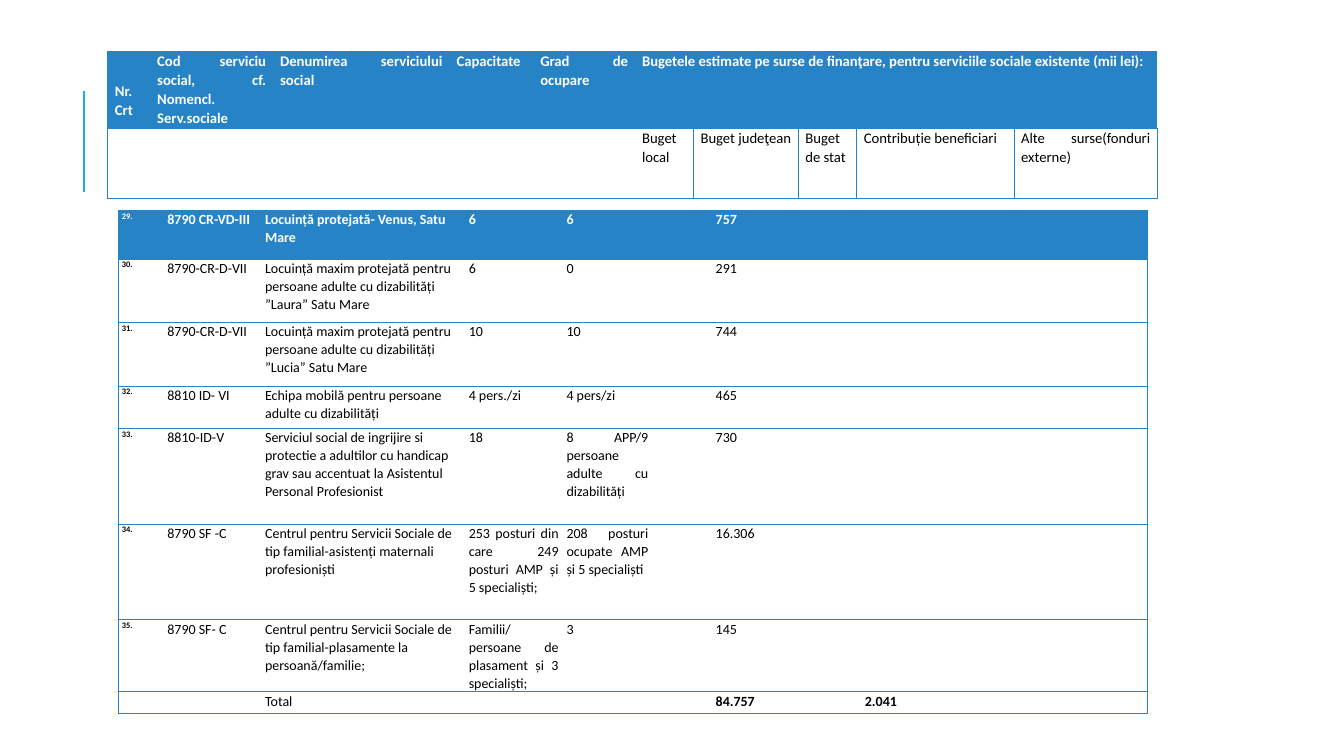
"""Build the slide listing social services and their estimated budgets."""
from dataclasses import dataclass

from lxml import etree
from pptx import Presentation
from pptx.dml.color import RGBColor
from pptx.enum.shapes import MSO_CONNECTOR
from pptx.enum.text import PP_ALIGN
from pptx.oxml.ns import qn
from pptx.slide import Slide
from pptx.table import Table, _Cell
from pptx.util import Inches, Pt

STRAIGHT = MSO_CONNECTOR.STRAIGHT
JUSTIFY, LEFT = PP_ALIGN.JUSTIFY, PP_ALIGN.LEFT
COLORS = {"blue": "2683C6", "accent": "1CADE4", "white": "FFFFFF", "black": "000000"}
FONT = "Calibri"
BORDER_WIDTH = Pt(0.75)
BLANK_LAYOUT = 6


@dataclass(frozen=True)
class TextStyle:
    """Formatting of the text in one cell."""
    size: float
    line_spacing: float
    bold: bool = False
    color: str = "black"
    alignment: PP_ALIGN = JUSTIFY


@dataclass(frozen=True)
class Grid:
    """Position, proportions and cell margin of one table."""
    left: float
    top: float
    columns: tuple[float, ...]
    rows: tuple[float, ...]
    margin: float


@dataclass(frozen=True)
class Service:
    """One social service with its county budget."""
    number: str
    code: str
    name: str
    capacity: str
    occupancy: str
    county_budget: str
    beneficiaries: str = ""

    def cells(self) -> list[str]:
        """Return the texts of the row, column by column."""
        return [self.number, self.code, self.name, self.capacity, self.occupancy,
                "", self.county_budget, "", self.beneficiaries, ""]


HEADING_GRID = Grid(1.07, 0.51, (0.42, 1.22, 1.75, 0.83, 1.01, 0.58, 1.04, 0.58, 1.56, 1.42),
                    (0.76, 0.7), 0.07)
SERVICE_GRID = Grid(1.17, 2.09, (0.45, 0.97, 2.02, 0.97, 0.89, 0.59, 0.83, 0.65, 0.77, 2.07),
                    (0.48, 0.63, 0.63, 0.42, 0.95, 0.95, 0.71, 0.21), 0.04)
HEADINGS = [
    ["Nr. Crt", "Cod serviciu social, cf. Nomencl. Serv.sociale", "Denumirea serviciului social",
     "Capacitate", "Grad de ocupare",
     "Bugetele estimate pe surse de finanţare, pentru serviciile sociale existente (mii lei):",
     "", "", "", ""],
    ["", "", "", "", "", "Buget local", "Buget judeţean", "Buget de stat",
     "Contribuție beneficiari", "Alte surse(fonduri externe)"],
]
HEADING_DIVIDERS = [{0, 10}, {0, 6, 7, 8, 9, 10}]
NAME_COLUMN = 2
SERVICES = [
    Service("29.", "8790 CR-VD-III", "Locuință protejată- Venus, Satu Mare", "6", "6", "757"),
    Service("30.", "8790-CR-D-VII",
            "Locuință maxim protejată pentru persoane adulte cu dizabilități ”Laura” Satu Mare",
            "6", "0", "291"),
    Service("31.", "8790-CR-D-VII",
            "Locuință maxim protejată pentru persoane adulte cu dizabilități ”Lucia” Satu Mare",
            "10", "10", "744"),
    Service("32.", "8810 ID- VI", "Echipa mobilă pentru persoane adulte cu dizabilități",
            "4 pers./zi", "4 pers/zi", "465"),
    Service("33.", "8810-ID-V",
            "Serviciul social de ingrijire si protectie a adultilor cu handicap grav "
            "sau accentuat la Asistentul Personal Profesionist",
            "18", "8 APP/9 persoane adulte cu dizabilități", "730"),
    Service("34.", "8790 SF -C",
            "Centrul pentru Servicii Sociale de tip familial-asistenți maternali profesioniști",
            "253 posturi din care 249 posturi AMP și 5 specialiști;",
            "208 posturi ocupate AMP și 5 specialiști", "16.306"),
    Service("35.", "8790 SF- C",
            "Centrul pentru Servicii Sociale de tip familial-plasamente la persoană/familie;",
            "Familii/persoane de plasament și 3 specialiști;", "3", "145"),
    Service("", "", "Total", "", "", "84.757", "2.041"),
]


def set_borders(cell: _Cell, left: bool, right: bool) -> None:
    """Draw the horizontal borders and the chosen vertical ones."""
    properties = cell._tc.get_or_add_tcPr()
    sides = {"a:lnL": left, "a:lnR": right, "a:lnT": True, "a:lnB": True}
    for position, (tag, visible) in enumerate(sides.items()):
        line = etree.Element(qn(tag), w=str(BORDER_WIDTH))
        if visible:
            fill = etree.SubElement(line, qn("a:solidFill"))
            etree.SubElement(fill, qn("a:srgbClr"), val=COLORS["blue"])
        else:
            etree.SubElement(line, qn("a:noFill"))
        properties.insert(position, line)


def set_text(cell: _Cell, text: str, style: TextStyle) -> None:
    """Write and format the text of a cell."""
    paragraph = cell.text_frame.paragraphs[0]
    paragraph.alignment = style.alignment
    paragraph.line_spacing = style.line_spacing
    paragraph.space_after = Pt(8)
    if not text:
        etree.SubElement(paragraph._p, qn("a:endParaRPr"), sz=str(int(style.size * 100)))
        return
    paragraph.text = text
    font = paragraph.runs[0].font
    font.name, font.size, font.bold = FONT, Pt(style.size), style.bold
    font.color.rgb = RGBColor.from_string(COLORS[style.color])


def fill_cell(cell: _Cell, text: str, style: TextStyle, margin: float, heading: bool) -> None:
    """Set the margins, background and text of a cell."""
    cell.margin_left = cell.margin_right = Inches(margin)
    cell.margin_top = cell.margin_bottom = Inches(0)
    if heading:
        cell.fill.solid()
        cell.fill.fore_color.rgb = RGBColor.from_string(COLORS["blue"])
    else:
        cell.fill.background()
    set_text(cell, text, style)


def add_grid(slide: Slide, grid: Grid) -> Table:
    """Add an unstyled table with the grid's proportions."""
    table = slide.shapes.add_table(
        len(grid.rows), len(grid.columns), Inches(grid.left), Inches(grid.top),
        Inches(sum(grid.columns)), Inches(sum(grid.rows))).table
    table.first_row = table.horz_banding = False
    for column, width in zip(table.columns, grid.columns):
        column.width = Inches(width)
    for row, height in zip(table.rows, grid.rows):
        row.height = Inches(height)
    return table


def add_services(slide: Slide) -> None:
    """Add the table of services and the total."""
    table = add_grid(slide, SERVICE_GRID)
    last_column = len(SERVICE_GRID.columns) - 1
    for row, service in enumerate(SERVICES):
        heading, total = row == 0, row == len(SERVICES) - 1
        for column, text in enumerate(service.cells()):
            style = TextStyle(
                size=6 if column == 0 else 10, line_spacing=1.06,
                bold=heading or column == 0 or (total and column > NAME_COLUMN),
                color="white" if heading else "black",
                alignment=LEFT if column == NAME_COLUMN and not total else JUSTIFY)
            cell = table.cell(row, column)
            fill_cell(cell, text, style, SERVICE_GRID.margin, heading)
            set_borders(cell, column == 0, column == last_column)


def add_headings(slide: Slide) -> None:
    """Add the two-row table of column headings."""
    table = add_grid(slide, HEADING_GRID)
    for row, (texts, dividers) in enumerate(zip(HEADINGS, HEADING_DIVIDERS)):
        heading = row == 0
        style = TextStyle(10.5, 1.07, heading, "white" if heading else "black")
        for column, text in enumerate(texts):
            cell = table.cell(row, column)
            fill_cell(cell, text, style, HEADING_GRID.margin, heading)
            set_borders(cell, column in dividers, column + 1 in dividers)
    table.cell(0, 0).margin_top = Inches(0.3)
    table.cell(0, 5).merge(table.cell(0, 9))
    table.cell(1, 0).merge(table.cell(1, 4))


def add_accent_line(slide: Slide) -> None:
    """Add the vertical line at the left of the slide."""
    line = slide.shapes.add_connector(STRAIGHT, Inches(0.83), Inches(1.9), Inches(0.83), Inches(0.9))
    line.line.color.rgb = RGBColor.from_string(COLORS["accent"])
    line.line.width = Pt(1.5)
    etree.SubElement(line._element.spPr, qn("a:effectLst"))


def main() -> None:
    """Build and save the presentation."""
    presentation = Presentation()
    presentation.slide_width, presentation.slide_height = Inches(13.33), Inches(7.5)
    slide = presentation.slides.add_slide(presentation.slide_layouts[BLANK_LAYOUT])
    add_accent_line(slide)
    add_services(slide)
    add_headings(slide)
    presentation.save("out.pptx")


if __name__ == "__main__":
    main()
